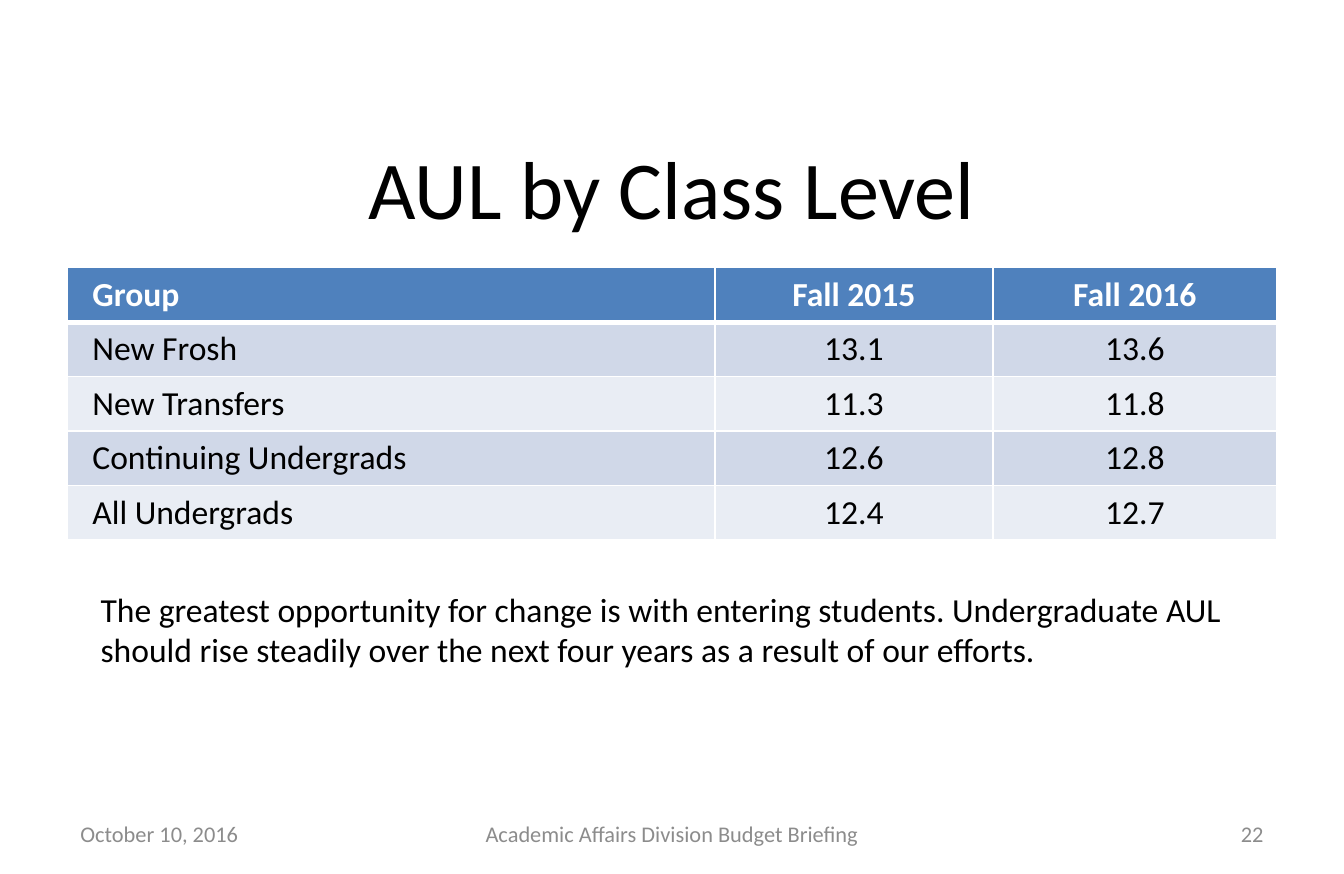
"""Build the slide on AUL by class level."""
from pptx import Presentation
from pptx.dml.color import RGBColor
from pptx.enum.text import MSO_ANCHOR as Anchor, MSO_AUTO_SIZE as AutoSize, PP_ALIGN as Align
from pptx.oxml import parse_xml
from pptx.oxml.ns import nsdecls
from pptx.util import Pt

BLACK = RGBColor(0x00, 0x00, 0x00)
WHITE = RGBColor(0xFF, 0xFF, 0xFF)
GRAY = RGBColor(0x8C, 0x8C, 0x8C)
HEADER_BLUE = RGBColor(0x4F, 0x81, 0xBD)
BAND_DARK = RGBColor(0xD0, 0xD8, 0xE8)
BAND_LIGHT = RGBColor(0xE9, 0xED, 0xF4)

CLASS_LEVELS = [
    ("Group", "Fall 2015", "Fall 2016"),
    ("New Frosh", "13.1", "13.6"),
    ("New Transfers", "11.3", "11.8"),
    ("Continuing Undergrads", "12.6", "12.8"),
    ("All Undergrads", "12.4", "12.7"),
]


class SlideBuilder:
    """Hold the text style and the current slide."""

    font_name = "Calibri"
    body_size = 18

    def __init__(self, slide):
        self.slide = slide

    def style_text(self, text_frame, text, size, color, align=Align.LEFT, bold=False):
        """Set one paragraph of text and format it."""
        text_frame.text = text
        paragraph = text_frame.paragraphs[0]
        paragraph.alignment = align
        font = paragraph.runs[0].font
        font.name, font.size, font.bold = self.font_name, Pt(size), bold
        font.color.rgb = color

    def title(self, text, left, top, width, height):
        """Place and fill the title placeholder."""
        shape = self.slide.shapes.title
        shape.left, shape.top, shape.width, shape.height = map(Pt, (left, top, width, height))
        shape.text_frame.vertical_anchor = Anchor.MIDDLE
        self.style_text(shape.text_frame, text, 44, BLACK, Align.CENTER)

    def text_box(self, text, left, top, width, height, size=body_size, color=BLACK,
                 align=Align.LEFT, anchor=Anchor.TOP, auto_size=AutoSize.NONE):
        """Add a wrapping text box."""
        shape = self.slide.shapes.add_textbox(*map(Pt, (left, top, width, height)))
        text_frame = shape.text_frame
        text_frame.word_wrap = True
        text_frame.auto_size = auto_size
        text_frame.vertical_anchor = anchor
        self.style_text(text_frame, text, size, color, align)

    def footer(self, text, left, width, align):
        """Add one part of the footer line."""
        self.text_box(text, left, 433.8, width, 24.9, 12, GRAY, align, Anchor.MIDDLE)

    def borders(self, cell, top, bottom):
        """Draw white borders around a cell."""
        properties = cell._tc.get_or_add_tcPr()
        for side, width in (("L", 1), ("R", 1), ("T", top), ("B", bottom)):
            properties.append(parse_xml(
                f'<a:ln{side} {nsdecls("a")} w="{Pt(width)}"><a:solidFill>'
                f'<a:srgbClr val="{WHITE}"/></a:solidFill></a:ln{side}>'))

    def table(self, rows, left, top, column_widths, row_height):
        """Add a banded table with a header row."""
        frame = self.slide.shapes.add_table(
            len(rows), len(column_widths), Pt(left), Pt(top),
            Pt(sum(column_widths)), Pt(row_height * len(rows)))
        table = frame.table
        for column, width in zip(table.columns, column_widths):
            column.width = Pt(width)
        for row_index, values in enumerate(rows):
            table.rows[row_index].height = Pt(row_height)
            is_header = row_index == 0
            band = BAND_DARK if row_index % 2 else BAND_LIGHT
            for column_index, value in enumerate(values):
                cell = table.cell(row_index, column_index)
                cell.margin_left = cell.margin_right = Pt(13.5)
                cell.margin_top = cell.margin_bottom = Pt(3.6)
                cell.vertical_anchor = Anchor.MIDDLE if is_header else Anchor.TOP
                self.borders(cell, 3 if row_index == 1 else 1, 3 if is_header else 1)
                cell.fill.solid()
                cell.fill.fore_color.rgb = HEADER_BLUE if is_header else band
                self.style_text(cell.text_frame, value, self.body_size,
                                WHITE if is_header else BLACK,
                                Align.CENTER if column_index else Align.LEFT, is_header)


def main():
    """Create and save the presentation."""
    presentation = Presentation()
    presentation.slide_width, presentation.slide_height = Pt(720), Pt(468)
    builder = SlideBuilder(presentation.slides.add_slide(presentation.slide_layouts[5]))
    builder.title("AUL by Class Level", 36, 63.4, 648, 72.7)
    builder.table(CLASS_LEVELS, 36, 143.3, (347, 149, 152), 29.2)
    builder.text_box(
        "The greatest opportunity for change is with entering students. Undergraduate AUL "
        "should rise steadily over the next four years as a result of our efforts.",
        46.8, 311.8, 637.2, 51, auto_size=AutoSize.SHAPE_TO_FIT_TEXT)
    builder.footer("October 10, 2016", 36, 168, Align.LEFT)
    builder.footer("Academic Affairs Division Budget Briefing", 246, 228, Align.CENTER)
    builder.footer("22", 516, 168, Align.RIGHT)
    presentation.save("out.pptx")


if __name__ == "__main__":
    main()
